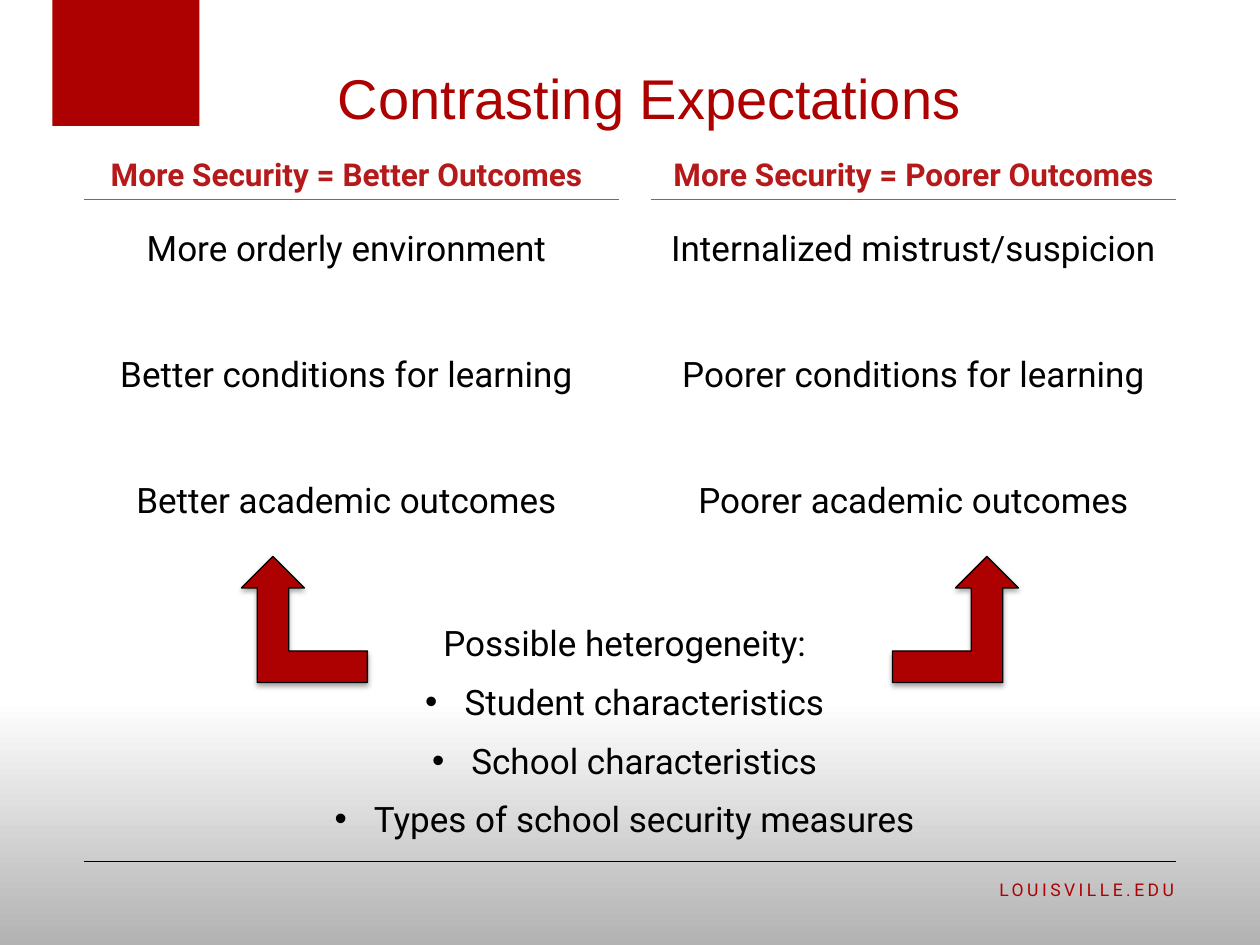
from lxml.etree import SubElement
from pptx import Presentation
from pptx.dml.color import RGBColor
from pptx.enum.shapes import MSO_CONNECTOR, MSO_SHAPE
from pptx.enum.text import MSO_ANCHOR, PP_ALIGN
from pptx.oxml.ns import qn
from pptx.util import Pt

COLORS = {
    "red": "AD0000",
    "heading": "B5191A",
    "rule": "BF4C48",
    "black": "000000",
    "white": "FFFFFF",
    "gray": "B2B2B2",
}


def rgb(name):
    return RGBColor.from_string(COLORS[name])


def add_bullet(p, indent):
    pPr = p._p.get_or_add_pPr()
    pPr.set("marL", str(Pt(indent)))
    pPr.set("indent", str(-Pt(indent)))
    SubElement(pPr, qn("a:buFont"), typeface="Arial")
    SubElement(pPr, qn("a:buChar"), char="•")


def add_shadow(sp):
    effects = SubElement(sp._element.spPr, qn("a:effectLst"))
    shadow = SubElement(effects, qn("a:outerShdw"), blurRad=str(Pt(3.1)),
                        dist=str(Pt(1.8)), dir="5400000", rotWithShape="0")
    color = SubElement(shadow, qn("a:srgbClr"), val=COLORS["black"])
    SubElement(color, qn("a:alpha"), val="35000")


class Deck:
    """Holds the presentation style and the current slide."""

    font = "Roboto"

    def __init__(self, width, height):
        self.prs = Presentation()
        self.prs.slide_width, self.prs.slide_height = Pt(width), Pt(height)
        self.s = None

    def add_slide(self):
        self.s = self.prs.slides.add_slide(self.prs.slide_layouts[6])
        fill = self.s.background.fill
        fill.gradient()
        fill.gradient_angle = 270
        stops = ((0.74, "white"), (1, "gray"))
        for stop, (position, color) in zip(fill.gradient_stops, stops):
            stop.position = position
            stop.color.rgb = rgb(color)

    def text(self, lines, box, size=20, color="black", bold=False, font=None,
             align=PP_ALIGN.CENTER, anchor=MSO_ANCHOR.TOP, line_spacing=1,
             gap=0, bullets_from=None, tracking=None):
        """Add a text box; lines from index bullets_from on get bullets."""
        tf = self.s.shapes.add_textbox(*map(Pt, box)).text_frame
        tf.word_wrap = True
        tf.vertical_anchor = anchor
        for i, line in enumerate(lines):
            p = tf.add_paragraph() if i else tf.paragraphs[0]
            p.alignment = align
            p.line_spacing = line_spacing
            if i and gap:
                p.space_before = Pt(gap)
            if bullets_from is not None and i >= bullets_from:
                add_bullet(p, 22.5)
            r = p.add_run()
            r.text = line
            r.font.name = font or self.font
            r.font.size = Pt(size)
            r.font.bold = bold
            r.font.color.rgb = rgb(color)
            if tracking:
                r._r.get_or_add_rPr().set("spc", str(tracking * 100))

    def shape(self, kind, box, outlined=False, flipped=False):
        sp = self.s.shapes.add_shape(kind, *map(Pt, box))
        sp.fill.solid()
        sp.fill.fore_color.rgb = rgb("red")
        if outlined:
            sp.line.color.rgb = rgb("black")
            sp.line.width = Pt(0.75)
            add_shadow(sp)
        else:
            sp.line.fill.background()
            sp.shadow.inherit = False
        if flipped:
            sp._element.spPr.xfrm.set("flipH", "1")

    def rule(self, left, right, y, color, width):
        line = self.s.shapes.add_connector(
            MSO_CONNECTOR.STRAIGHT, Pt(left), Pt(y), Pt(right), Pt(y))
        line.line.color.rgb = rgb(color)
        line.line.width = Pt(width)
        SubElement(line._element.spPr, qn("a:effectLst"))


def main():
    deck = Deck(720, 540)
    deck.add_slide()
    deck.rule(48, 672, 492, "black", 0.5)
    deck.shape(MSO_SHAPE.RECTANGLE, (30, 0, 84, 72))
    deck.text(["LOUISVILLE.EDU"], (516, 499, 162, 29), size=10, color="red",
              align=PP_ALIGN.RIGHT, tracking=2)
    deck.text(["Contrasting Expectations"], (186, 12, 486, 66), size=32,
              color="red", font="Arial", align=PP_ALIGN.LEFT,
              anchor=MSO_ANCHOR.BOTTOM)

    columns = [
        (42, (48, 354), "More Security = Better Outcomes",
         ["More orderly environment", "Better conditions for learning",
          "Better academic outcomes"]),
        (366, (372, 672), "More Security = Poorer Outcomes",
         ["Internalized mistrust/suspicion", "Poorer conditions for learning",
          "Poorer academic outcomes"]),
    ]
    for left, (start, end), heading, outcomes in columns:
        deck.rule(start, end, 114, "rule", 0.75)
        deck.text([heading], (left, 78, 312, 36), size=18, color="heading",
                  bold=True, anchor=MSO_ANCHOR.BOTTOM)
        deck.text(outcomes, (left, 114, 312, 192), line_spacing=1.5, gap=36)

    deck.text(["Possible heterogeneity:", "Student characteristics",
               "School characteristics", "Types of school security measures"],
              (42, 342, 630, 144), line_spacing=1.4, bullets_from=1)
    for left, flipped in ((138, True), (510, False)):
        deck.shape(MSO_SHAPE.BENT_UP_ARROW, (left, 318, 72, 72),
                   outlined=True, flipped=flipped)
    deck.prs.save("out.pptx")


if __name__ == "__main__":
    main()
